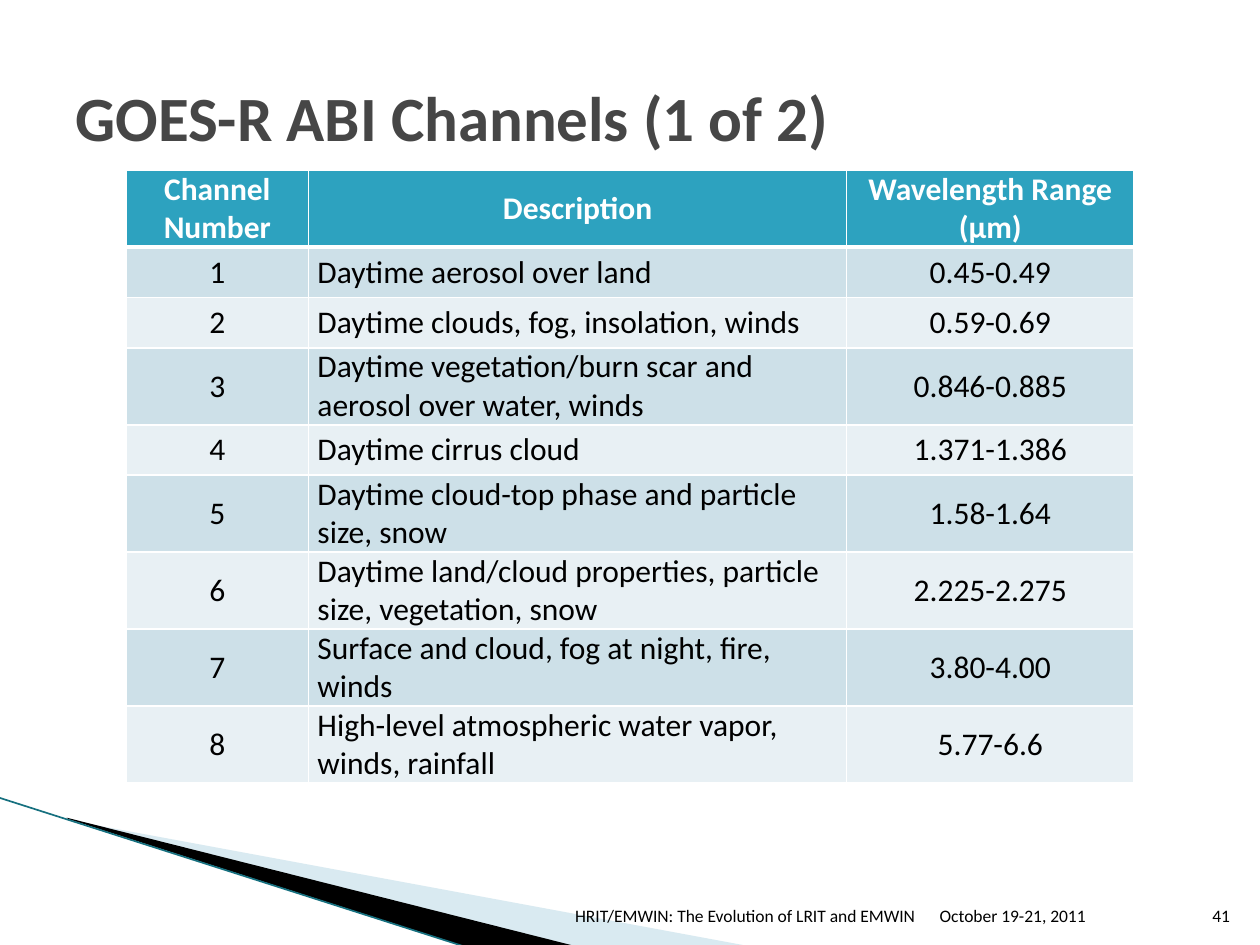
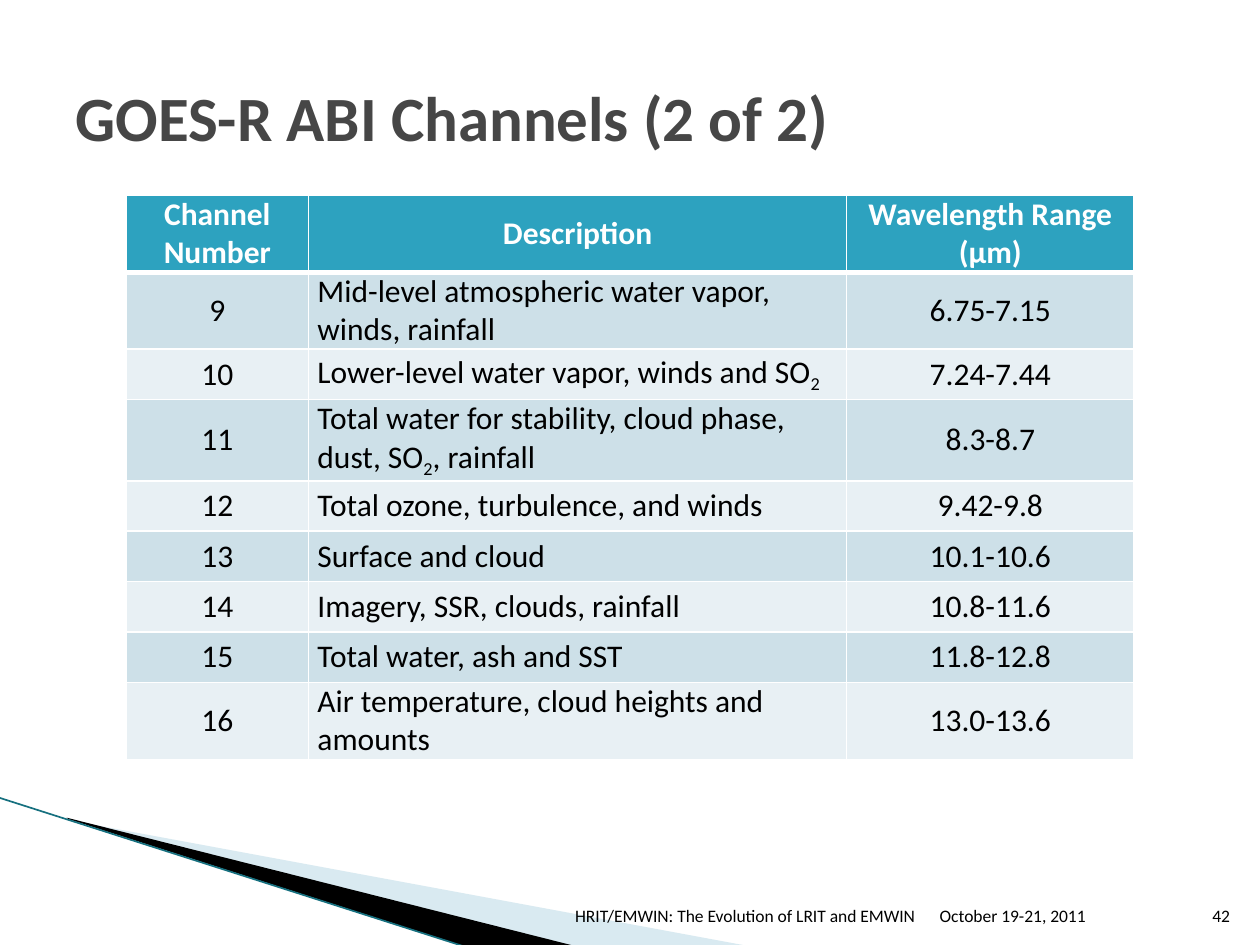
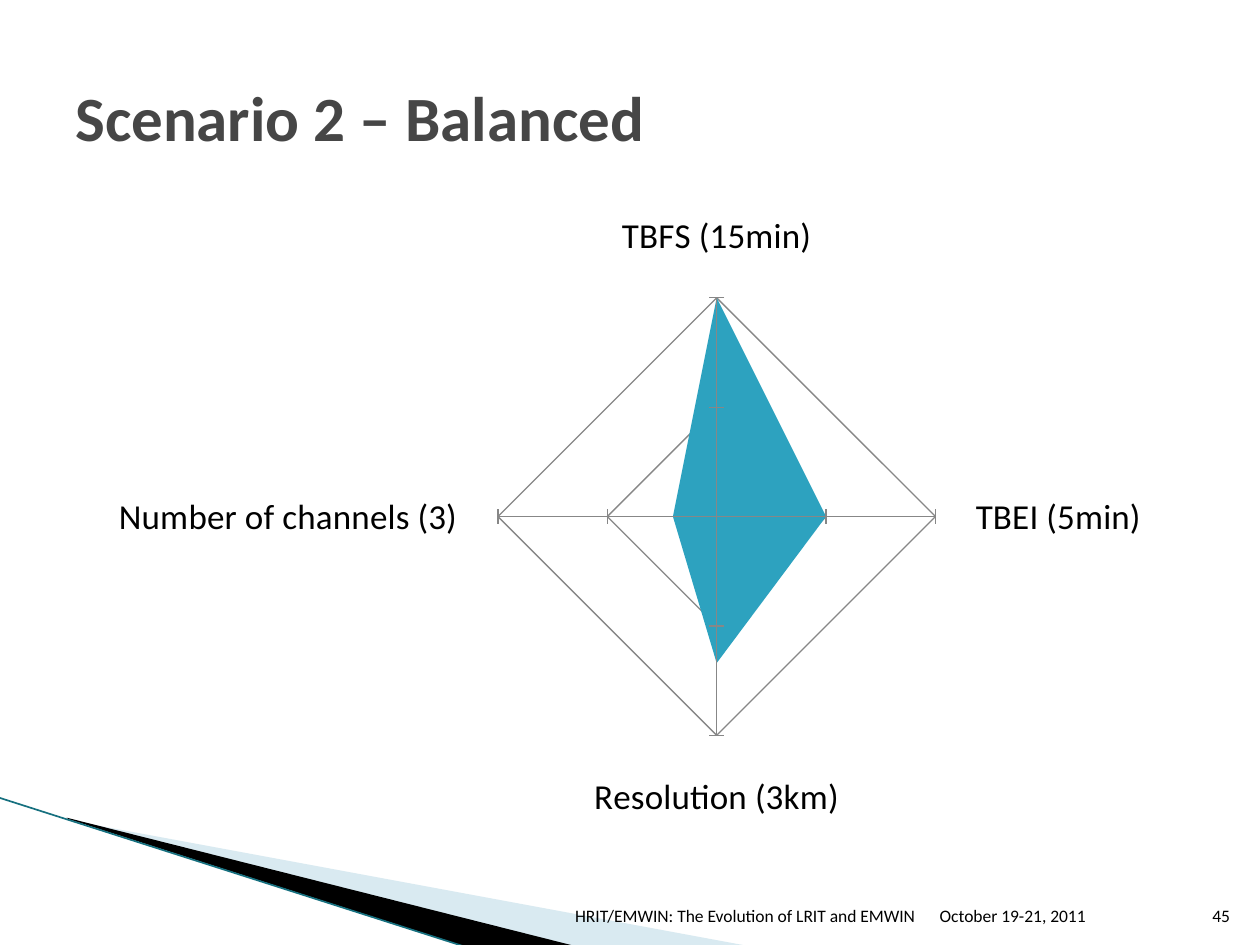
from lxml import etree
from pptx import Presentation
from pptx.chart.data import CategoryChartData
from pptx.dml.color import RGBColor
from pptx.enum.chart import XL_CHART_TYPE, XL_TICK_LABEL_POSITION, XL_TICK_MARK
from pptx.enum.shapes import MSO_CONNECTOR
from pptx.enum.text import MSO_ANCHOR, PP_ALIGN
from pptx.oxml.ns import qn
from pptx.util import Pt

PX = 9144
FONT = "Calibri"
LEFT, CENTER, RIGHT = PP_ALIGN.LEFT, PP_ALIGN.CENTER, PP_ALIGN.RIGHT
MIDDLE, BOTTOM = MSO_ANCHOR.MIDDLE, MSO_ANCHOR.BOTTOM
STRAIGHT = MSO_CONNECTOR.STRAIGHT
RADAR_FILLED = XL_CHART_TYPE.RADAR_FILLED
CROSS = XL_TICK_MARK.CROSS
NO_LABELS = XL_TICK_LABEL_POSITION.NONE

COLORS = {
    "white": "FFFFFF", "black": "000000", "title": "464646", "teal": "2DA2BF",
    "pale": "A0CBDC", "edge": "16707F", "odd": "CDE0E8", "even": "E8F0F4",
    "grid": "878787",
}
RGB = {name: RGBColor.from_string(value) for name, value in COLORS.items()}

SWEEPS = [
    ([(55, 651), (595, 751), (456, 751), (55, 650)], "pale", 40),
    ([(53, 649), (457, 751), (372, 752), (54, 650)], "black", 100),
]
HEADER = ("Channel Number", "Description", "Wavelength Range (µm)")
COLUMNS = [(145, CENTER), (427, LEFT), (228, CENTER)]
ROW_HEIGHT = 40
BORDERS = ("a:lnL", "a:lnR", "a:lnT", "a:lnB")
SUB = "_2"

SLIDES = [
    {"title": "GOES-R ABI Channels (1 of 2)", "number": 41, "top": 135, "height": 480, "rows": [
        ("1", "Daytime aerosol over land", "0.45-0.49"),
        ("2", "Daytime clouds, fog, insolation, winds", "0.59-0.69"),
        ("3", "Daytime vegetation/burn scar and aerosol over water, winds", "0.846-0.885"),
        ("4", "Daytime cirrus cloud", "1.371-1.386"),
        ("5", "Daytime cloud-top phase and particle size, snow", "1.58-1.64"),
        ("6", "Daytime land/cloud properties, particle size, vegetation, snow", "2.225-2.275"),
        ("7", "Surface and cloud, fog at night, fire, winds", "3.80-4.00"),
        ("8", "High-level atmospheric water vapor, winds, rainfall", "5.77-6.6"),
    ]},
    {"title": "GOES-R ABI Channels (2 of 2)", "number": 42, "top": 155, "height": 440, "rows": [
        ("9", "Mid-level atmospheric water vapor, winds, rainfall", "6.75-7.15"),
        ("10", "Lower-level water vapor, winds and SO_2", "7.24-7.44"),
        ("11", "Total water for stability, cloud phase, dust, SO_2, rainfall", "8.3-8.7"),
        ("12", "Total ozone, turbulence, and winds", "9.42-9.8"),
        ("13", "Surface and cloud", "10.1-10.6"),
        ("14", "Imagery, SSR, clouds, rainfall", "10.8-11.6"),
        ("15", "Total water, ash and SST", "11.8-12.8"),
        ("16", "Air temperature, cloud heights and amounts", "13.0-13.6"),
    ]},
    {"title": "Scenario 2 – Balanced", "number": 45, "scores": {
        "TBFS (15min)": 100, "TBEI (5min)": 50,
        "Resolution (3km)": 67, "Number of channels (3)": 20,
    }},
]


def write(tf, text, size, color, bold=False, align=LEFT):
    p = tf.paragraphs[0]
    p.alignment = align
    before, sub, after = text.partition(SUB)
    for part in (before, sub, after):
        if part:
            r = p.add_run()
            r.text = part.removeprefix("_")
            r.font.name, r.font.size, r.font.bold = FONT, Pt(size), bold
            r.font.color.rgb = RGB[color]
            if part == SUB:
                r._r.get_or_add_rPr().set("baseline", "-25000")


def add_text(slide, box, text, size, color, bold=False, align=LEFT, anchor=BOTTOM):
    tf = slide.shapes.add_textbox(*(n * PX for n in box)).text_frame
    tf.word_wrap = True
    tf.vertical_anchor = anchor
    write(tf, text, size, color, bold, align)


prs = Presentation()
prs.slide_width, prs.slide_height = 1000 * PX, 750 * PX

for content in SLIDES:
    slide = prs.slides.add_slide(prs.slide_layouts[6])
    slide.background.fill.solid()
    slide.background.fill.fore_color.rgb = RGB["white"]

    for points, color, opacity in SWEEPS:
        builder = slide.shapes.build_freeform(*points[0], scale=PX)
        builder.add_line_segments(points[1:])
        sp = builder.convert_to_shape()
        sp.shadow.inherit = False
        sp.line.fill.background()
        sp.fill.solid()
        sp.fill.fore_color.rgb = RGB[color]
        if opacity < 100:
            clr = sp._element.spPr.find(".//" + qn("a:srgbClr"))
            etree.SubElement(clr, qn("a:alpha"), val=str(opacity * 1000))

    edge = slide.shapes.add_connector(STRAIGHT, -1 * PX, 633 * PX, 371 * PX, 752 * PX)
    edge.line.color.rgb = RGB["edge"]
    edge.line.width = Pt(0.95)
    etree.SubElement(edge._element.spPr, qn("a:effectLst"))

    if "rows" in content:
        rows = [HEADER] + content["rows"]
        frame = slide.shapes.add_table(
            len(rows), len(COLUMNS), 100 * PX, content["top"] * PX, 800 * PX, content["height"] * PX)
        table = frame.table
        for column, (width, _) in zip(table.columns, COLUMNS):
            column.width = width * PX
        for i, row in enumerate(rows):
            table.rows[i].height = ROW_HEIGHT * PX
            header = i == 0
            fill = "teal" if header else ("even", "odd")[i % 2]
            for j, text in enumerate(row):
                cell = table.cell(i, j)
                cell.margin_left = cell.margin_right = 7 * PX
                cell.margin_top = cell.margin_bottom = 0
                cell.vertical_anchor = MIDDLE
                align = CENTER if header else COLUMNS[j][1]
                write(cell.text_frame, text, 18, "white" if header else "black", header, align)
                tcPr = cell._tc.get_or_add_tcPr()
                for tag in BORDERS:
                    thick = (header and tag == "a:lnB") or (i == 1 and tag == "a:lnT")
                    ln = etree.SubElement(tcPr, qn(tag), w=str(Pt(3 if thick else 1)))
                    solid = etree.SubElement(ln, qn("a:solidFill"))
                    etree.SubElement(solid, qn("a:srgbClr"), val=COLORS["white"])
                cell.fill.solid()
                cell.fill.fore_color.rgb = RGB[fill]
        frame.height = content["height"] * PX
    else:
        data = CategoryChartData()
        data.categories = list(content["scores"])
        data.add_series("Series 1", list(content["scores"].values()))
        chart = slide.shapes.add_chart(
            RADAR_FILLED, 50 * PX, 160 * PX, 900 * PX, 500 * PX, data).chart
        chart.has_legend = chart.has_title = False
        chart.font.name, chart.font.size = FONT, Pt(10)
        chart.font.color.rgb = RGB["black"]
        plot = chart.plots[0]
        plot.vary_by_categories = False
        series = plot.series[0]
        series.smooth = False
        series.format.fill.solid()
        series.format.fill.fore_color.rgb = RGB["teal"]
        series.format.line.fill.background()
        for axis in (chart.category_axis, chart.value_axis):
            axis.major_tick_mark = CROSS
            axis.has_major_gridlines = True
            for line in (axis.format.line, axis.major_gridlines.format.line):
                line.color.rgb = RGB["grid"]
                line.width = Pt(0.75)
        labels = chart.category_axis.tick_labels.font
        labels.name, labels.size = FONT, Pt(20)
        labels.color.rgb = RGB["black"]
        axis = chart.value_axis
        axis.minimum_scale, axis.maximum_scale, axis.major_unit = 0, 100, 50
        axis.tick_label_position = NO_LABELS

    add_text(slide, (736, 700, 210, 40), "October 19-21, 2011", 10, "black")
    add_text(slide, (400, 700, 336, 40), "HRIT/EMWIN: The Evolution of LRIT and EMWIN",
             10, "black", align=RIGHT)
    add_text(slide, (946, 700, 40, 40), str(content["number"]), 10, "black", align=RIGHT)
    add_text(slide, (50, 30, 825, 125), content["title"], 36, "title", bold=True, anchor=MIDDLE)

prs.save("out.pptx")
